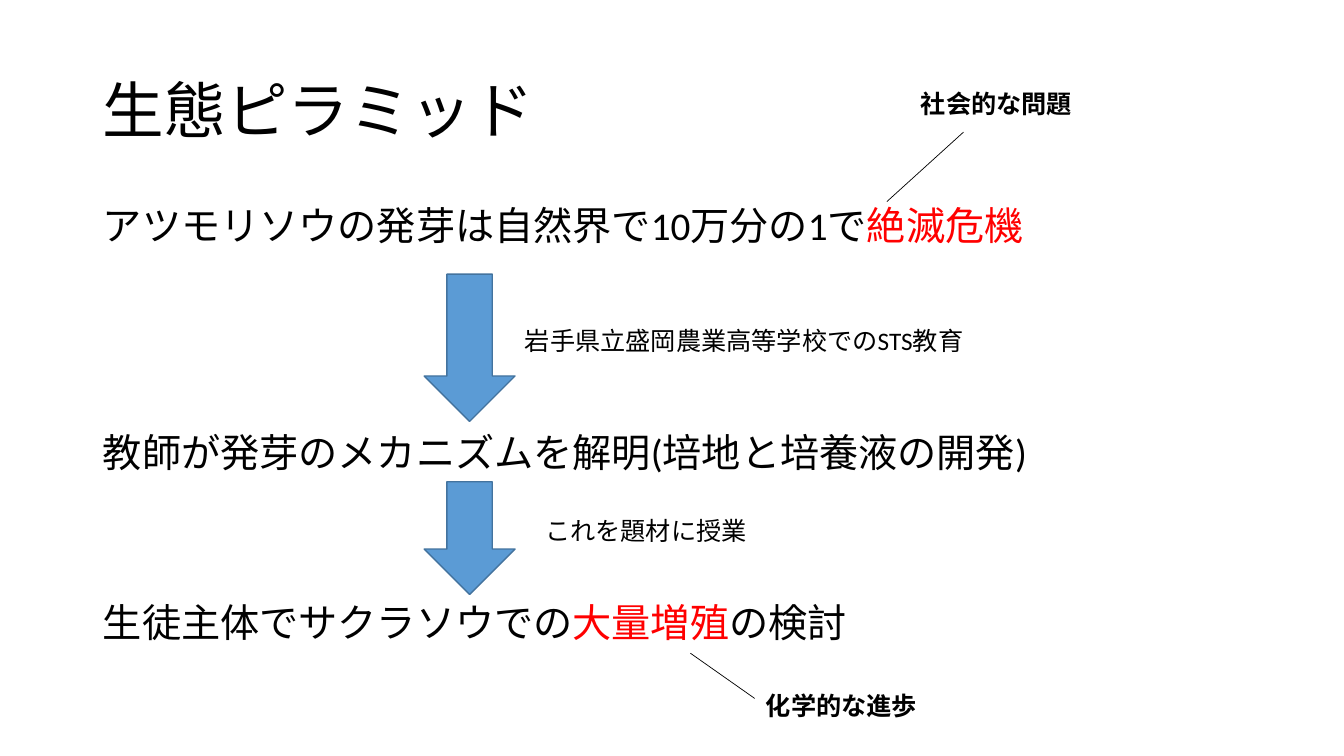
from lxml.etree import SubElement
from pptx import Presentation
from pptx.dml.color import RGBColor
from pptx.enum.shapes import MSO_CONNECTOR as CONNECTOR, MSO_SHAPE as SHAPE
from pptx.enum.text import MSO_ANCHOR as ANCHOR, MSO_AUTO_SIZE as AUTO, PP_ALIGN as ALIGN
from pptx.oxml.ns import qn
from pptx.util import Cm, Pt

FONT, BLACK, RED = "Calibri", "000000", "FF0000"
BLUE, DARK_BLUE = "5B9BD5", "43739E"

TITLE = "生態ピラミッド"
# space before in points, then (text, colour) runs
STEPS = [
    (10, [("アツモリソウの発芽は自然界で10万分の1で", BLACK), ("絶滅危機", RED)]),
    (132, [("教師が発芽のメカニズムを解明(培地と培養液の開発)", BLACK)]),
    (91, [("生徒主体でサクラソウでの", BLACK), ("大量増殖", RED), ("の検討", BLACK)]),
]
# text, left, top, width (cm), bold
LABELS = [
    ("岩手県立盛岡農業高等学校でのSTS教育", 12.98, 8.08, 11.56, False),
    ("社会的な問題", 22.96, 2.11, 5.44, True),
    ("これを題材に授業", 13.49, 12.85, 11.05, False),
    ("化学的な進歩", 19.05, 17.27, 5.97, True),
]
ARROW_LEFT, ARROW_WIDTH = 10.69, 2.29
ARROWS = [(6.91, 3.71), (12.14, 2.84)]  # top, height (cm)
LEADERS = [(22.35, 5.08, 24.28, 3.33), (17.4, 16.46, 19.02, 17.6)]  # x1, y1, x2, y2
LEFT, WIDTH = 2.34, 29.21


def rgb(code):
    return RGBColor.from_string(code)


def style(r, size, color=BLACK, bold=False):
    r.font.name, r.font.size, r.font.bold = FONT, Pt(size), bold
    r.font.color.rgb = rgb(color)


def place(sp, left, top, width, height):
    sp.left, sp.top, sp.width, sp.height = map(Cm, (left, top, width, height))


def fill_title(sp):
    place(sp, LEFT, 1.02, WIDTH, 3.68)
    tf = sp.text_frame
    tf.text, tf.vertical_anchor, tf.auto_size = TITLE, ANCHOR.MIDDLE, AUTO.NONE
    p = tf.paragraphs[0]
    p.alignment, p.line_spacing = ALIGN.LEFT, 0.9
    style(p.runs[0], 44)


def fill_body(sp):
    place(sp, LEFT, 5.08, WIDTH, 12.09)
    tf = sp.text_frame
    tf.auto_size = AUTO.NONE
    for i, (space, runs) in enumerate(STEPS):
        p = tf.add_paragraph() if i else tf.paragraphs[0]
        p.line_spacing, p.space_before = 0.9, Pt(space)
        pPr = p._p.get_or_add_pPr()
        pPr.set("marL", "0")
        pPr.set("indent", "0")
        SubElement(pPr, qn("a:buNone"))
        for text, color in runs:
            r = p.add_run()
            r.text = text
            style(r, 28, color)


def add_arrow(shapes, top, height):
    sp = shapes.add_shape(SHAPE.DOWN_ARROW, 0, 0, 0, 0)
    place(sp, ARROW_LEFT, top, ARROW_WIDTH, height)
    sp.shadow.inherit = False
    sp.fill.solid()
    sp.fill.fore_color.rgb = rgb(BLUE)
    sp.line.color.rgb, sp.line.width = rgb(DARK_BLUE), Pt(1)


def add_leader(shapes, *ends):
    line = shapes.add_connector(CONNECTOR.STRAIGHT, *map(Cm, ends))
    line.line.color.rgb, line.line.width = rgb(BLACK), Pt(0.5)
    SubElement(line._element.spPr, qn("a:effectLst"))


def add_label(shapes, text, left, top, width, bold):
    tf = shapes.add_textbox(*map(Cm, (left, top, width, 1.02))).text_frame
    tf.text, tf.word_wrap, tf.auto_size = text, True, AUTO.SHAPE_TO_FIT_TEXT
    style(tf.paragraphs[0].runs[0], 18, bold=bold)


def main():
    prs = Presentation()
    prs.slide_width, prs.slide_height = Cm(33.87), Cm(19.05)
    s = prs.slides.add_slide(prs.slide_layouts[1])
    fill_title(s.shapes.title)
    fill_body(s.placeholders[1])
    for arrow in ARROWS:
        add_arrow(s.shapes, *arrow)
    for leader in LEADERS:
        add_leader(s.shapes, *leader)
    for label in LABELS:
        add_label(s.shapes, *label)
    prs.save("out.pptx")


if __name__ == "__main__":
    main()
